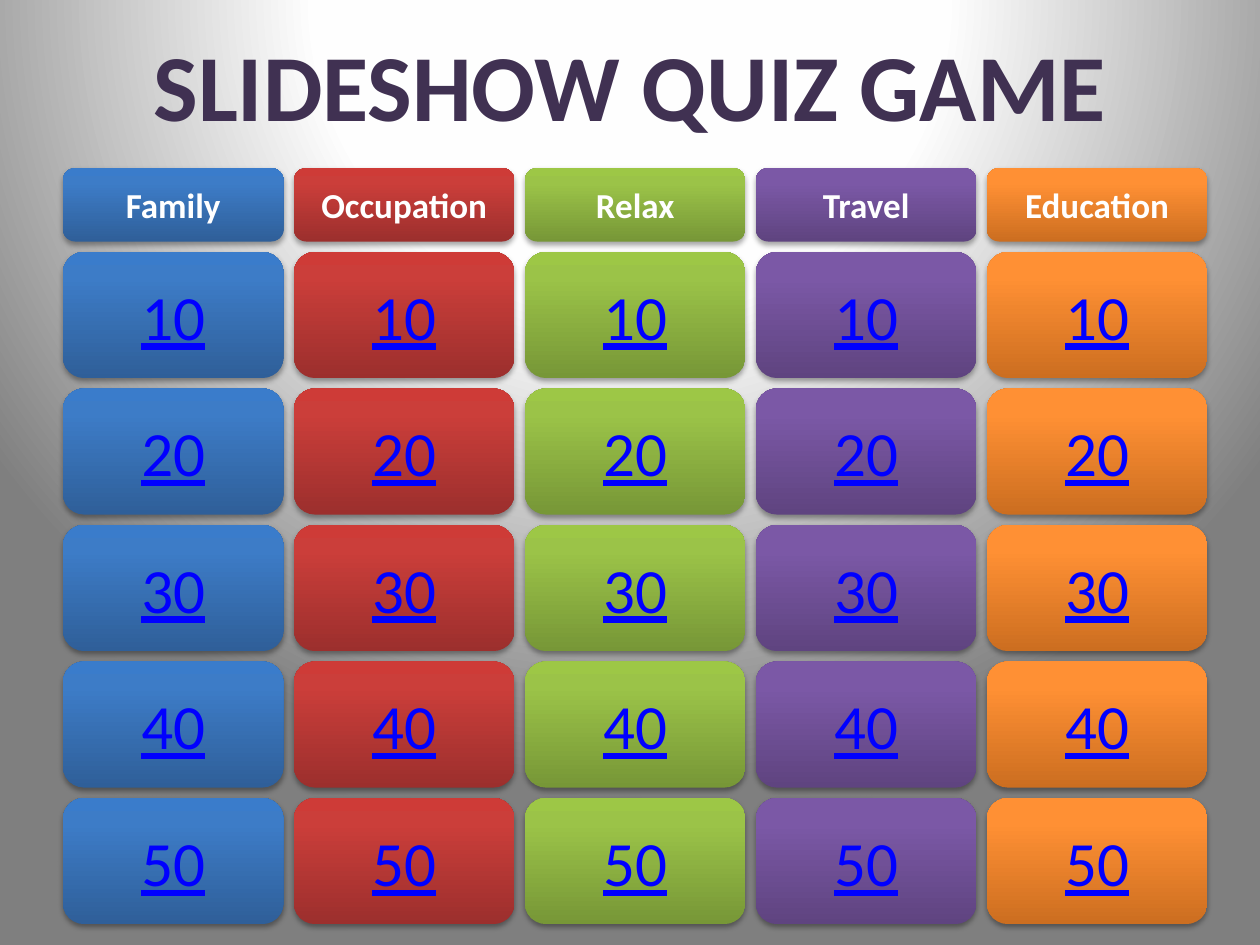
import pptx
import pptx.dml.color
import pptx.enum.shapes
import pptx.enum.text
import pptx.oxml
import pptx.oxml.ns
import pptx.util
from pptx.util import Cm

COLORS = {"title": "403152", "header": "FFFFFF", "points": "0000FF", "shadow": "000000"}
BACKGROUND = [(0, "FFFFFF"), (40, "FEFEFE"), (100, "7F7F7F")]
CATEGORIES = {
    "Family": ("2F5F99", "3D7CC7", "3A7CCB"),
    "Occupation": ("9C2F2D", "CB3E3A", "CE3B37"),
    "Relax": ("779737", "9BC348", "9DC746"),
    "Travel": ("5F4480", "7B58A6", "7C57A8"),
    "Education": ("CC6E20", "FF9034", "FF9136"),
}
POINTS = (10, 20, 30, 40, 50)
GAP = 0.21
HEADER_HEIGHT = 1.48
FORMATS = {
    "title": {"size": pptx.util.Pt(54), "bold": True},
    "header": {"size": pptx.util.Pt(20), "bold": True},
    "points": {"size": pptx.util.Pt(36), "underline": True},
}
NS = pptx.oxml.ns.nsdecls("a")
UPWARD = '<a:lin ang="16200000" scaled="0"/>'
SPOTLIGHT = ('<a:path path="circle"><a:fillToRect l="50000" t="-80000" '
             'r="50000" b="180000"/></a:path>')


def set_gradient(parent, stops, direction):
    """Swap the solid fill of an element for a gradient."""
    gs = "".join(f'<a:gs pos="{pos * 1000}"><a:srgbClr val="{color}"/></a:gs>'
                 for pos, color in stops)
    grad = pptx.oxml.parse_xml(
        f'<a:gradFill {NS} rotWithShape="1"><a:gsLst>{gs}</a:gsLst>{direction}</a:gradFill>')
    parent.replace(parent.find(pptx.oxml.ns.qn("a:solidFill")), grad)


def add_shadow(sp):
    sp.shadow.inherit = False
    effects = sp.element.spPr.find(pptx.oxml.ns.qn("a:effectLst"))
    effects.append(pptx.oxml.parse_xml(
        f'<a:outerShdw {NS} blurRad="40000" dist="23000" dir="5400000" rotWithShape="0">'
        f'<a:srgbClr val="{COLORS["shadow"]}"><a:alpha val="35000"/></a:srgbClr>'
        '</a:outerShdw>'))


def set_text(sp, text, role):
    tf = sp.text_frame
    tf.word_wrap = True
    tf.vertical_anchor = pptx.enum.text.MSO_ANCHOR.MIDDLE
    p = tf.paragraphs[0]
    p.alignment = pptx.enum.text.PP_ALIGN.CENTER
    r = p.add_run()
    r.text = text
    r.font.name = "Calibri"
    r.font.color.rgb = pptx.dml.color.RGBColor.from_string(COLORS[role])
    for name, value in FORMATS[role].items():
        setattr(r.font, name, value)


def add_title(s, left, top, width, height):
    sp = s.shapes.add_textbox(Cm(left), Cm(top), Cm(width), Cm(height))
    set_text(sp, "SLIDESHOW QUIZ GAME", "title")


def add_tile(s, left, top, width, height, text, role, shades):
    sp = s.shapes.add_shape(pptx.enum.shapes.MSO_SHAPE.ROUNDED_RECTANGLE,
                            Cm(left), Cm(top), Cm(width), Cm(height))
    sp.fill.solid()
    set_gradient(sp.element.spPr, zip((0, 80, 100), shades), UPWARD)
    sp.line.fill.background()
    add_shadow(sp)
    set_text(sp, text, role)


def add_board(s, left, top, width, height):
    """Lay out one column per category: a header above its point tiles."""
    tile_width = (width + GAP) / len(CATEGORIES) - GAP
    tile_height = (height - HEADER_HEIGHT) / len(POINTS) - GAP
    for col, (category, shades) in enumerate(CATEGORIES.items()):
        x = left + col * (tile_width + GAP)
        add_tile(s, x, top, tile_width, HEADER_HEIGHT, category, "header", shades)
        for row, points in enumerate(POINTS):
            y = top + HEADER_HEIGHT + GAP + row * (tile_height + GAP)
            add_tile(s, x, y, tile_width, tile_height, str(points), "points", shades)


def main():
    prs = pptx.Presentation()
    prs.slide_width, prs.slide_height = Cm(25.4), Cm(19.05)
    s = prs.slides.add_slide(prs.slide_layouts[6])
    s.background.fill.solid()
    set_gradient(s.element.find(".//" + pptx.oxml.ns.qn("p:bgPr")), BACKGROUND, SPOTLIGHT)
    add_title(s, 1.27, 0, 22.86, 3.39)
    add_board(s, 1.27, 3.39, 23.07, 15.24)
    prs.save("out.pptx")


if __name__ == "__main__":
    main()
